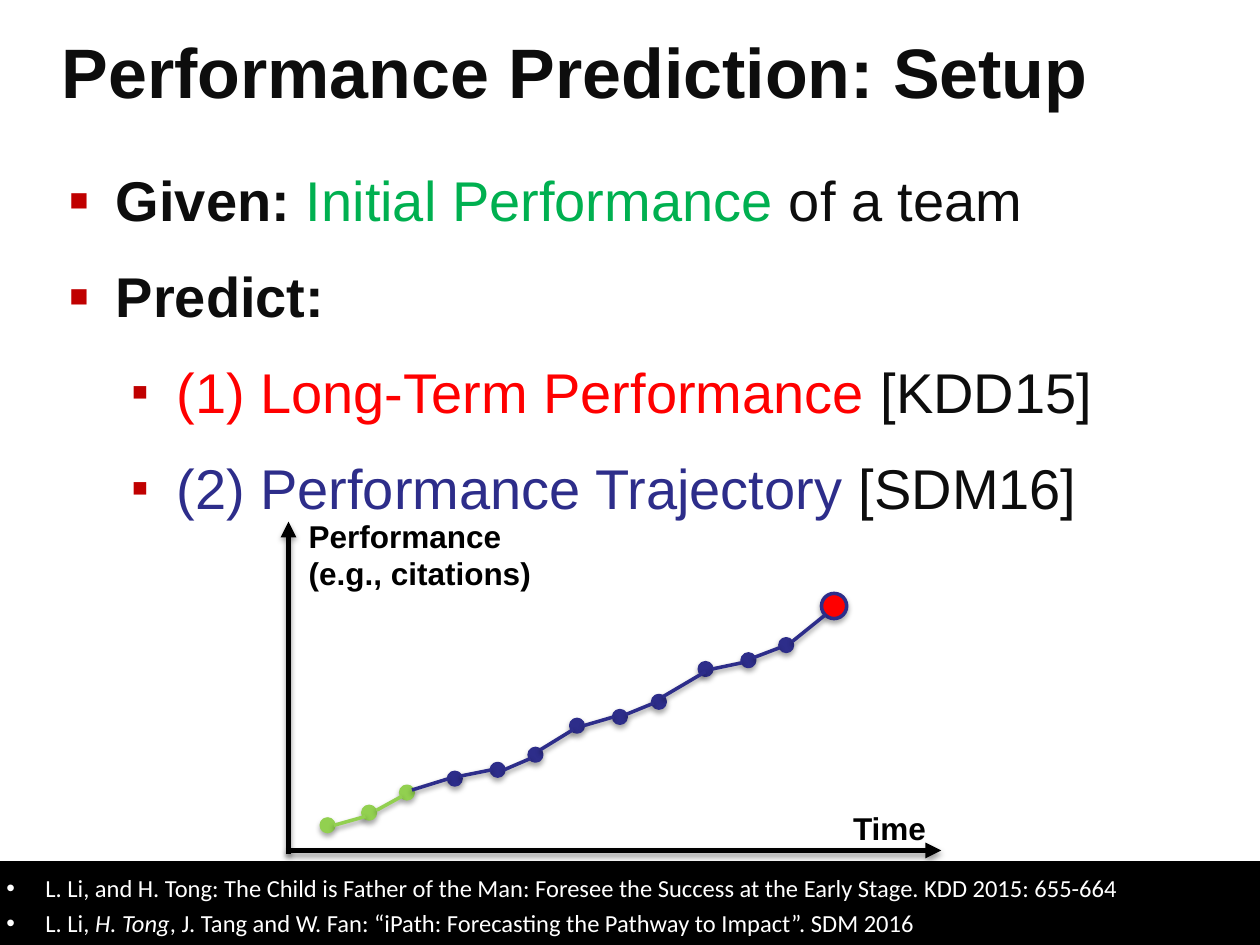
import dataclasses

import lxml.etree
import pptx
import pptx.dml.color
import pptx.enum.shapes
import pptx.enum.text
import pptx.oxml.ns
import pptx.util
from pptx.util import Inches

SHAPE = pptx.enum.shapes.MSO_SHAPE
ANCHOR = pptx.enum.text.MSO_ANCHOR
ALIGN = pptx.enum.text.PP_ALIGN


@dataclasses.dataclass(frozen=True)
class Theme:
    """Colours, fonts and type sizes of the slide."""
    ink: str = "0D0D0D"
    black: str = "000000"
    white: str = "FFFFFF"
    bullet: str = "C00000"
    given: str = "00B050"
    target: str = "FF0000"
    path_blue: str = "2D2D8A"
    early: str = "92D050"
    font: str = "Arial"
    note_font: str = "Calibri"
    title_size: int = 40
    body_size: int = 32
    label_size: int = 18
    note_size: int = 14


THEME = Theme()
DOT_SIZE = 0.1
GOAL_SIZE = 0.2
EARLY_DOTS = 3
EARLY_LINKS = 2
DOTS = [(0.28, 2.45), (0.61, 2.35), (0.91, 2.19), (1.29, 2.08),
        (1.63, 2.01), (1.93, 1.89), (2.26, 1.66), (2.6, 1.59),
        (2.91, 1.47), (3.28, 1.21), (3.62, 1.14), (3.92, 1.02)]
GOAL = (4.25, 0.66)
LINKS = [(0.38, 2.5, 0.63, 2.43), (0.72, 2.38, 0.92, 2.27),
         (1, 2.22, 1.29, 2.13), (1.38, 2.11, 1.63, 2.06),
         (1.73, 2.06, 1.94, 1.97), (2.02, 1.9, 2.28, 1.74),
         (2.36, 1.71, 2.6, 1.64), (2.7, 1.62, 2.92, 1.53),
         (2.99, 1.48, 3.33, 1.28), (3.38, 1.26, 3.62, 1.21),
         (3.71, 1.17, 3.92, 1.09), (4.02, 1.04, 4.28, 0.83)]


def rgb(value):
    """Return a colour object for a hex value."""
    return pptx.dml.color.RGBColor.from_string(value)


def add_element(parent, tag, **attributes):
    """Append a DrawingML element to its parent."""
    element = lxml.etree.SubElement(parent, pptx.oxml.ns.qn(tag))
    for name, value in attributes.items():
        element.set(name, str(value))
    return element


def add_shadow(properties, blur, distance, angle, opacity):
    """Append an outer shadow to shape or run properties."""
    effects = add_element(properties, "a:effectLst")
    shadow = add_element(effects, "a:outerShdw", blurRad=pptx.util.Pt(blur),
                         dist=pptx.util.Pt(distance), dir=angle * 60000,
                         algn="tl", rotWithShape=0)
    colour = add_element(shadow, "a:srgbClr", val=THEME.black)
    add_element(colour, "a:alpha", val=opacity * 1000)


def style_span(span, size, colour, bold=False, italic=False, font=THEME.font):
    """Format one run of text."""
    span.font.name = font
    span.font.size = pptx.util.Pt(size)
    span.font.bold = bold
    span.font.italic = italic
    span.font.color.rgb = rgb(colour)


def set_bullet(para, char, margin, hanging, colour, percent=100):
    """Give a paragraph a hanging bullet."""
    properties = para._p.get_or_add_pPr()
    properties.set("marL", str(Inches(margin)))
    properties.set("indent", str(-Inches(hanging)))
    add_element(add_element(properties, "a:buClr"), "a:srgbClr", val=colour)
    add_element(properties, "a:buSzPct", val=percent * 1000)
    add_element(properties, "a:buFont", typeface=THEME.font)
    add_element(properties, "a:buChar", char=char)


def set_insets(frame, inset):
    """Set all four margins of a text frame."""
    frame.margin_left = frame.margin_right = Inches(inset)
    frame.margin_top = frame.margin_bottom = Inches(inset)


def next_para(frame, index):
    """Return the first paragraph, or a new one after it."""
    return frame.add_paragraph() if index else frame.paragraphs[0]


def place_title(page, box, text):
    """Place the shadowed title in its placeholder."""
    title = page.shapes.title
    title.left, title.top, title.width, title.height = map(Inches, box)
    frame = title.text_frame
    frame.text = text
    frame.vertical_anchor = ANCHOR.MIDDLE
    set_insets(frame, 0)
    para = frame.paragraphs[0]
    para.alignment = ALIGN.LEFT
    span = para.runs[0]
    span.font.size = pptx.util.Pt(THEME.title_size)
    span.font.bold = True
    span.font.color.rgb = rgb(THEME.ink)
    add_shadow(span.font._element, 3, 3, 45, 40)
    span.font.name = THEME.font


def place_setup(page, box):
    """Place the two-level list of what is given and predicted."""
    rows = [
        (0, [("Given: ", THEME.ink, True),
             ("Initial Performance", THEME.given, False),
             (" of a team", THEME.ink, False)]),
        (0, [("Predict:", THEME.ink, True)]),
        (1, [("(1) Long-Term Performance ", THEME.target, False),
             ("[KDD15]", THEME.ink, False)]),
        (1, [("(2) Performance Trajectory ", THEME.path_blue, False),
             ("[SDM16]", THEME.ink, False)]),
    ]
    bullets = [(0.38, 0.38, THEME.bullet, 110), (0.86, 0.36, THEME.bullet, 90)]
    frame = page.shapes.add_textbox(*map(Inches, box)).text_frame
    frame.word_wrap = True
    set_insets(frame, 0.05)
    for index, (level, pieces) in enumerate(rows):
        para = next_para(frame, index)
        para.level = level
        para.line_spacing = 1.2
        para.space_before = pptx.util.Pt(8.8 if index else 0)
        set_bullet(para, "▪", *bullets[level])
        for text, colour, bold in pieces:
            span = para.add_run()
            span.text = text
            style_span(span, THEME.body_size, colour, bold)


def add_line(page, ends, colour, width, arrow=False):
    """Draw a shadowed straight line, with an arrowhead if asked."""
    line = page.shapes.add_connector(
        pptx.enum.shapes.MSO_CONNECTOR.STRAIGHT, *map(Inches, ends))
    line.line.color.rgb = rgb(colour)
    line.line.width = pptx.util.Pt(width)
    if arrow:
        add_element(line.line._get_or_add_ln(), "a:tailEnd", type="triangle")
    add_shadow(line._element.spPr, 3, 1.6, 90, 38)


def add_dot(page, left, top, size, fill, outline):
    """Draw one shadowed point of the trajectory."""
    dot = page.shapes.add_shape(
        SHAPE.OVAL, *map(Inches, (left, top, size, size)))
    dot.fill.solid()
    dot.fill.fore_color.rgb = rgb(fill)
    dot.line.color.rgb = rgb(outline)
    dot.line.width = pptx.util.Pt(2)
    add_shadow(dot._element.spPr, 3, 1.8, 90, 35)


def add_label(page, box, text):
    """Write an axis label."""
    frame = page.shapes.add_textbox(*map(Inches, box)).text_frame
    frame.word_wrap = False
    set_insets(frame, 0.05)
    frame.text = text
    for para in frame.paragraphs:
        style_span(para.runs[0], THEME.label_size, THEME.black, True)


def place_trajectory(page, box):
    """Draw the axes, labels, points and links of the trajectory."""
    left, top, width, height = box
    right, bottom = left + width, top + height
    axis_x, axis_y = left + 0.02, bottom - 0.03
    add_line(page, (left, axis_y, right, axis_y), THEME.black, 3, True)
    add_line(page, (axis_x, bottom, axis_x, top + 0.09), THEME.black, 3, True)
    add_label(page, (right - 0.75, bottom - 0.41, 0.69, 0.4), "Time")
    add_label(page, (left + 0.13, top, 1.88, 0.71),
              "Performance\n(e.g., citations)")
    for index, (x, y) in enumerate(DOTS):
        colour = THEME.early if index < EARLY_DOTS else THEME.path_blue
        add_dot(page, left + x, top + y, DOT_SIZE, colour, colour)
    add_dot(page, left + GOAL[0], top + GOAL[1], GOAL_SIZE,
            THEME.target, THEME.path_blue)
    for index, (x1, y1, x2, y2) in enumerate(LINKS):
        colour = THEME.early if index < EARLY_LINKS else THEME.path_blue
        ends = (left + x1, top + y1, left + x2, top + y2)
        add_line(page, ends, colour, 2)


def place_references(page, box):
    """Place the black bar with the two references."""
    rows = [
        [("L. Li, and H. Tong: The Child is Father of the Man: Foresee the "
          "Success at the Early Stage. KDD 2015: 655-664", False)],
        [("L. Li, ", False), ("H. Tong", True),
         (", J. Tang and W. Fan: “iPath: Forecasting the Pathway to Impact”. "
          "SDM 2016", False)],
    ]
    bar = page.shapes.add_shape(SHAPE.RECTANGLE, *map(Inches, box))
    bar.shadow.inherit = False
    bar.fill.solid()
    bar.fill.fore_color.rgb = rgb(THEME.black)
    bar.line.color.rgb = rgb(THEME.black)
    bar.line.width = pptx.util.Pt(1)
    frame = bar.text_frame
    frame.word_wrap = True
    frame.vertical_anchor = ANCHOR.TOP
    set_insets(frame, 0.05)
    for index, pieces in enumerate(rows):
        para = next_para(frame, index)
        para.alignment = ALIGN.LEFT
        para.line_spacing = 1.18
        set_bullet(para, "•", 0.31, 0.31, THEME.white)
        for text, italic in pieces:
            span = para.add_run()
            span.text = text
            style_span(span, THEME.note_size, THEME.white, italic=italic,
                       font=THEME.note_font)


def main():
    """Build the slide and save it."""
    deck = pptx.Presentation()
    deck.slide_width, deck.slide_height = Inches(10), Inches(7.5)
    page = deck.slides.add_slide(deck.slide_layouts[5])
    place_title(page, (0.49, 0, 9, 1.12), "Performance Prediction: Setup")
    place_setup(page, (0.49, 1.16, 9, 6.17))
    place_trajectory(page, (2.27, 4.05, 5.2, 2.73))
    place_references(page, (0, 6.84, 10.01, 0.65))
    deck.save("out.pptx")


if __name__ == "__main__":
    main()
